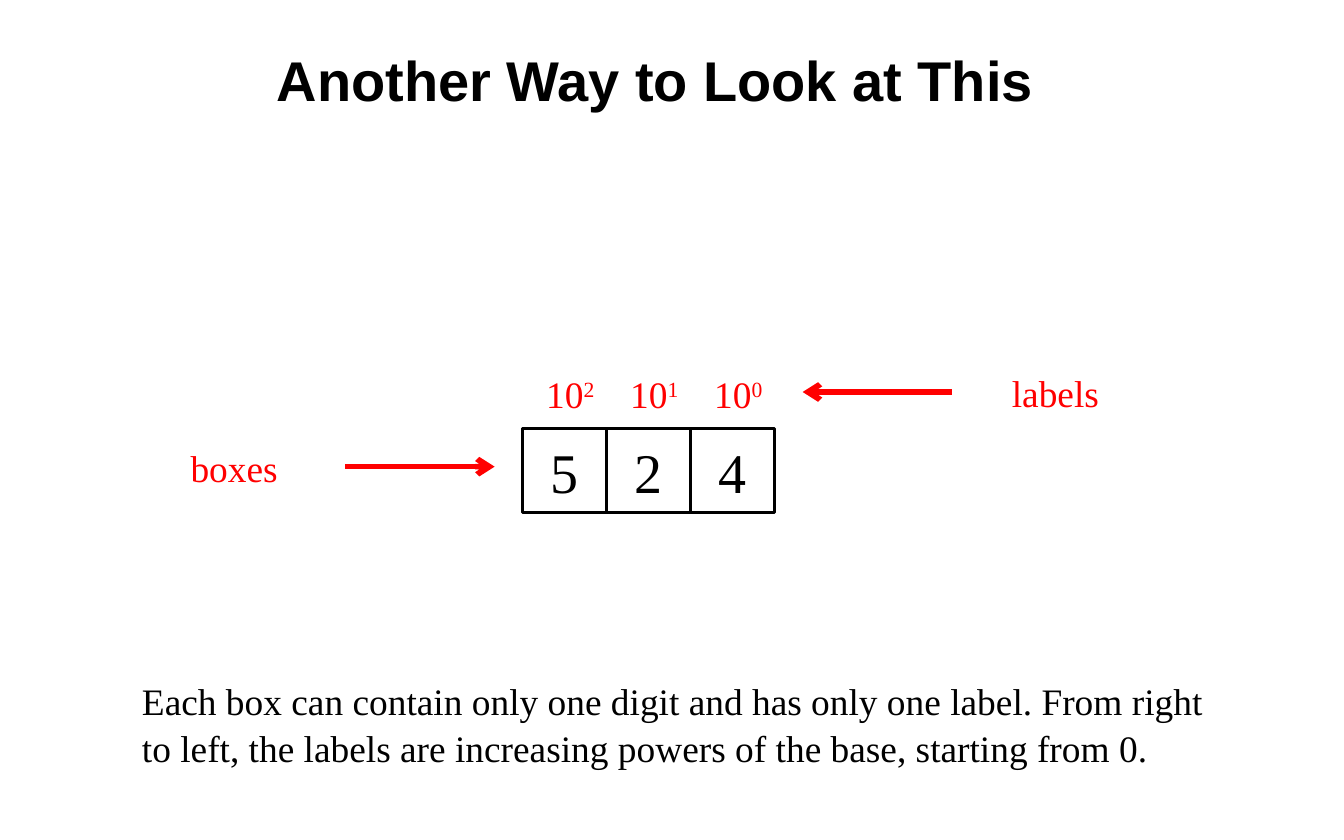
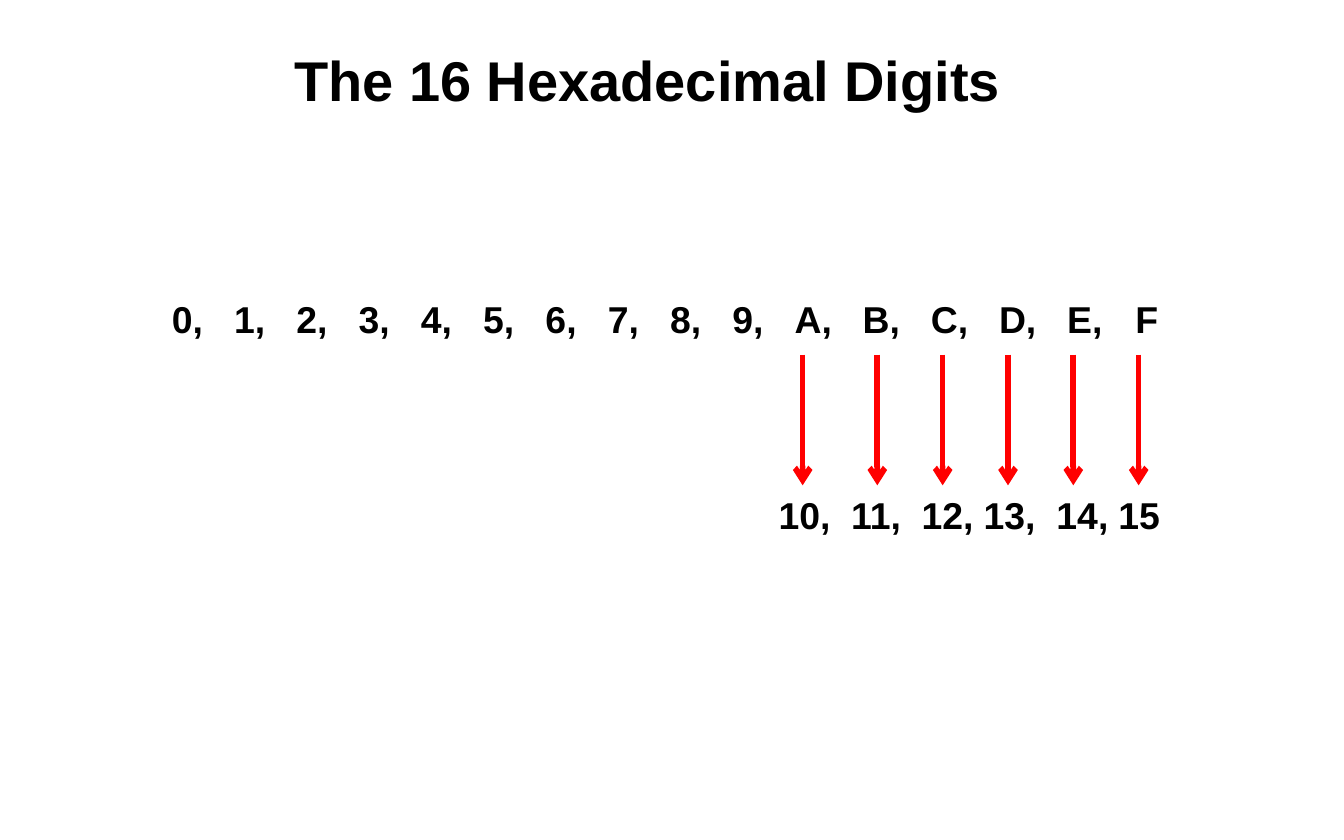
import pptx
import pptx.dml.color
import pptx.enum.shapes
import pptx.enum.text
import pptx.oxml.ns
import pptx.util
from lxml import etree

Pt = pptx.util.Pt
ALIGN = pptx.enum.text.PP_ALIGN
ANCHOR = pptx.enum.text.MSO_ANCHOR
AUTO_SIZE = pptx.enum.text.MSO_AUTO_SIZE
COLORS = {"ink": "000000", "accent": "FF0000", "paper": "FFFFFF"}
TITLE_FONT = {"name": "Arial", "size": Pt(30), "bold": True}
DIGIT_FONT = {"name": "Times New Roman", "size": Pt(30), "bold": False}
NOTE_FONT = {"name": "Times New Roman", "size": Pt(20), "bold": False}
HEX_FONT = {"name": "Arial", "size": Pt(20), "bold": True}


def rgb(role):
    """Return the colour of a role."""
    return pptx.dml.color.RGBColor.from_string(COLORS[role])


def set_format(target, values):
    """Set every attribute in values on target."""
    for attribute, value in values.items():
        setattr(target, attribute, value)


def add_run(paragraph, text, font, role="ink"):
    """Append a formatted run to a paragraph."""
    run = paragraph.add_run()
    run.text = text
    set_format(run.font, font)
    run.font.color.rgb = rgb(role)
    return run


def add_note(slide, box, lines, font, role="ink", wrap=False):
    """Add a text box with one paragraph per line and return its paragraphs."""
    frame = slide.shapes.add_textbox(*map(Pt, box)).text_frame
    frame.word_wrap = wrap
    for index, line in enumerate(lines):
        paragraph = frame.add_paragraph() if index else frame.paragraphs[0]
        paragraph.space_before = Pt(1)
        add_run(paragraph, line, font, role)
    return frame.paragraphs


def add_arrow(slide, start, end):
    """Draw a red arrow from start to end."""
    arrow = slide.shapes.add_connector(
        pptx.enum.shapes.MSO_CONNECTOR.STRAIGHT, *map(Pt, (*start, *end)))
    arrow.line.width = Pt(3)
    arrow.line.color.rgb = rgb("accent")
    qn = pptx.oxml.ns.qn
    etree.SubElement(arrow.line._get_or_add_ln(), qn("a:tailEnd"), type="arrow")
    etree.SubElement(arrow._element.spPr, qn("a:effectLst"))


def add_titled_slide(deck, title):
    """Add a white slide with the shared title style."""
    slide = deck.slides.add_slide(deck.slide_layouts[5])
    slide.background.fill.solid()
    slide.background.fill.fore_color.rgb = rgb("paper")
    heading = slide.shapes.title
    set_format(heading, {"left": Pt(0), "top": Pt(20),
                         "width": Pt(702), "height": Pt(45)})
    set_format(heading.text_frame, {"vertical_anchor": ANCHOR.MIDDLE,
                                    "auto_size": AUTO_SIZE.NONE})
    paragraph = heading.text_frame.paragraphs[0]
    paragraph.alignment = ALIGN.CENTER
    add_run(paragraph, title, TITLE_FONT)
    return slide


def add_digit_boxes(slide, left, top, side, digits):
    """Draw a row of touching squares, each labelled with its power of ten."""
    row = slide.shapes.add_group_shape()
    for index, digit in enumerate(digits):
        x = left + index * side
        square = row.shapes.add_shape(pptx.enum.shapes.MSO_SHAPE.RECTANGLE,
                                      *map(Pt, (x, top, side, side)))
        square.shadow.inherit = False
        square.fill.background()
        square.line.width = Pt(1.5)
        square.line.color.rgb = rgb("ink")
        square.text_frame.vertical_anchor = ANCHOR.MIDDLE
        paragraph = square.text_frame.paragraphs[0]
        paragraph.alignment = ALIGN.CENTER
        add_run(paragraph, digit, DIGIT_FONT)
        label = add_note(slide, (x + 5.5, top - 34.5, 41, 32), ["10"],
                         NOTE_FONT, "accent")[0]
        power = add_run(label, str(len(digits) - 1 - index), NOTE_FONT, "accent")
        power.font._element.set("baseline", "30000")


def add_digit_list(slide, box, digits, stops):
    """Write digits on one line, each after the first at its tab stop."""
    paragraph = add_note(slide, box, [",\t".join(digits)], HEX_FONT, wrap=True)[0]
    qn = pptx.oxml.ns.qn
    tabs = etree.Element(qn("a:tabLst"))
    for stop in stops:
        etree.SubElement(tabs, qn("a:tab"), pos=str(int(Pt(stop))), algn="l")
    paragraph._p.get_or_add_pPr().append(tabs)


def build_place_values(deck):
    """Show a decimal number as labelled boxes."""
    slide = add_titled_slide(deck, "Another Way to Look at This")
    add_digit_boxes(slide, 280, 229.7, 45, "524")
    add_arrow(slide, (185, 250), (265, 250))
    add_arrow(slide, (510, 210), (430, 210))
    add_note(slide, (95, 235, 62, 32), ["boxes"], NOTE_FONT, "accent")
    add_note(slide, (535, 195, 61, 32), ["labels"], NOTE_FONT, "accent")
    add_note(slide, (69, 360, 592, 55.5), [
        "Each box can contain only one digit and has only one label. From right",
        "to left, the labels are increasing powers of the base, starting from 0.",
    ], NOTE_FONT)


def build_hex_digits(deck):
    """Show the hexadecimal digits and the values of the letters."""
    slide = add_titled_slide(deck, "The 16 Hexadecimal Digits ")
    number_pitch, letter_pitch = 33.36, 36.5
    stops = [min(i, 10) * number_pitch + max(i - 10, 0) * letter_pitch
             for i in range(1, 16)]
    add_digit_list(slide, (85, 155, 560, 65), "0123456789ABCDEF", stops)
    add_digit_list(slide, (410, 260, 230, 45), map(str, range(10, 16)),
                   [38.9, 76.7, 109.9, 148.9, 182.1])
    for x in [430, *range(470, 611, 35)]:
        add_arrow(slide, (x, 190), (x, 260))


def main():
    """Build and save the deck."""
    deck = pptx.Presentation()
    set_format(deck, {"slide_width": Pt(720), "slide_height": Pt(450)})
    build_place_values(deck)
    build_hex_digits(deck)
    deck.save("out.pptx")


if __name__ == "__main__":
    main()
